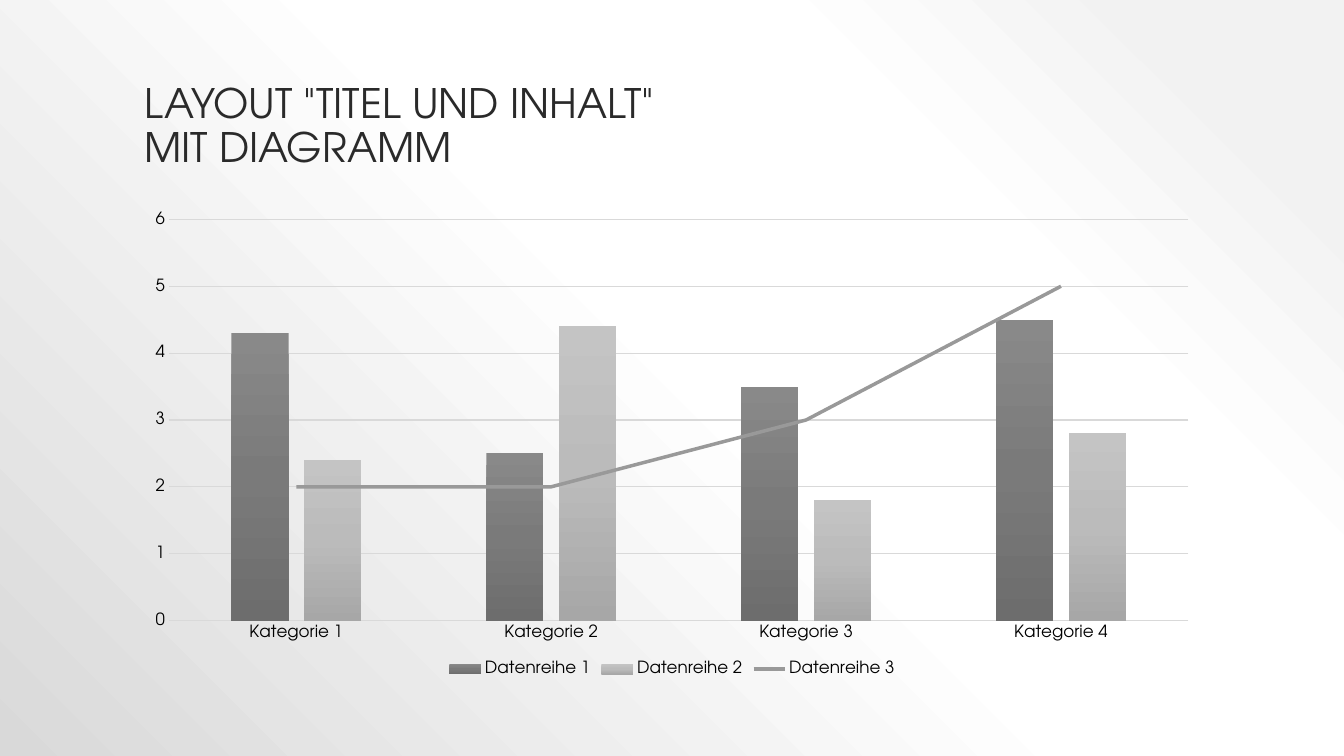
from lxml import etree
from pptx import Presentation
from pptx.chart.data import CategoryChartData
from pptx.dml.color import RGBColor
from pptx.enum.chart import XL_CHART_TYPE as ChartType
from pptx.enum.chart import XL_LEGEND_POSITION as LegendPosition
from pptx.enum.chart import XL_MARKER_STYLE as MarkerStyle
from pptx.enum.chart import XL_TICK_MARK as TickMark
from pptx.enum.text import MSO_ANCHOR, MSO_AUTO_SIZE, PP_ALIGN
from pptx.oxml import parse_xml
from pptx.oxml.ns import nsdecls, qn
from pptx.util import Pt

PX = 914400 / 100.8
SLIDE_SIZE = (1344, 756)
TITLE_BOX = (134, 30, 1076, 146)
CHART_BOX = (134, 202, 1076, 479)
FONT = "TeX Gyre Adventor"
COLORS = {"title": "2A2A2A", "text": "000000", "grid": "D9D9D9", "line": "999999"}
BACKGROUND_STOPS = [(10, "F2F2F2"), (28, "FFFFFF"), (48, "FFFFFF"), (100, "D9D9D9")]
FROM_TOP_RIGHT = '<a:path {} path="circle"><a:fillToRect l="100000" b="100000"/></a:path>'
DOWNWARD = '<a:lin {} ang="5400000" scaled="0"/>'
CATEGORIES = [f"Kategorie {number}" for number in range(1, 5)]
SERIES = {
    "Datenreihe 1": (4.3, 2.5, 3.5, 4.5),
    "Datenreihe 2": (2.4, 4.4, 1.8, 2.8),
    "Datenreihe 3": (2, 2, 3, 5),
}
COLUMN_STOPS = [
    [(0, "898989"), (50, "7A7A7A"), (100, "6D6D6D")],
    [(0, "C4C4C4"), (50, "BBBBBB"), (100, "A7A7A7")],
]


def px(length):
    return round(length * PX)


def color(name):
    return RGBColor.from_string(COLORS[name])


def format_font(font, size, color_name):
    font.name = FONT
    font.size = Pt(size)
    font.bold = False
    font.color.rgb = color(color_name)


def format_line(line, width, color_name):
    line.width = Pt(width)
    line.color.rgb = color(color_name)


def set_gradient(fill, owner, stops, direction):
    """Fill with (percent, hex) stops; owner is the XML element that holds the fill."""
    fill.gradient()
    gradient = next(owner.iter(qn("a:gradFill")))
    for child in list(gradient):
        gradient.remove(child)
    stop_list = etree.SubElement(gradient, qn("a:gsLst"))
    for percent, hex_color in stops:
        stop = etree.SubElement(stop_list, qn("a:gs"), pos=str(percent * 1000))
        etree.SubElement(stop, qn("a:srgbClr"), val=hex_color)
    gradient.append(parse_xml(direction.format(nsdecls("a"))))


def add_title(slide, box, text):
    title = slide.shapes.title
    title.left, title.top, title.width, title.height = map(px, box)
    frame = title.text_frame
    frame.text = text
    frame.word_wrap = True
    frame.auto_size = MSO_AUTO_SIZE.NONE
    frame.vertical_anchor = MSO_ANCHOR.BOTTOM
    paragraph = frame.paragraphs[0]
    paragraph.alignment = PP_ALIGN.LEFT
    paragraph.line_spacing = 0.9
    for run in paragraph.runs:
        format_font(run.font, 29, "title")


def move_last_series_to_line(chart):
    """Turn the last column series into a line plot on the same axes."""
    columns = chart.plots[0]._element
    series = columns.findall(qn("c:ser"))[-1]
    for column_setting in series.findall(qn("c:invertIfNegative")):
        series.remove(column_setting)
    line_plot = parse_xml(
        f'<c:lineChart {nsdecls("c")}><c:grouping val="standard"/>'
        '<c:varyColors val="0"/><c:marker val="1"/></c:lineChart>'
    )
    line_plot.insert(2, series)
    for axis in columns.findall(qn("c:axId")):
        etree.SubElement(line_plot, qn("c:axId"), val=axis.get("val"))
    columns.addnext(line_plot)


def format_axes(chart):
    for axis in (chart.category_axis, chart.value_axis):
        axis.major_tick_mark = axis.minor_tick_mark = TickMark.NONE
        format_font(axis.tick_labels.font, 12, "text")
    format_line(chart.category_axis.format.line, 0.75, "grid")
    values = chart.value_axis
    values.minimum_scale, values.maximum_scale, values.major_unit = 0, 6, 1
    values.format.line.fill.background()
    values.has_major_gridlines = True
    format_line(values.major_gridlines.format.line, 0.75, "grid")


def add_combined_chart(slide, box):
    data = CategoryChartData()
    data.categories = CATEGORIES
    for name, values in SERIES.items():
        data.add_series(name, values)
    chart = slide.shapes.add_chart(ChartType.COLUMN_CLUSTERED, *map(px, box), data).chart
    chart.has_title = False
    format_font(chart.font, 12, "text")
    move_last_series_to_line(chart)
    column_plot, line_plot = chart.plots
    column_plot.vary_by_categories = False
    column_plot.gap_width = 219
    column_plot.overlap = -27
    for series, stops in zip(column_plot.series, COLUMN_STOPS):
        set_gradient(series.format.fill, series._element, stops, DOWNWARD)
    line_series = line_plot.series[0]
    line_series.smooth = False
    line_series.marker.style = MarkerStyle.NONE
    format_line(line_series.format.line, 2.5, "line")
    format_axes(chart)
    chart.has_legend = True
    chart.legend.position = LegendPosition.BOTTOM
    chart.legend.include_in_layout = False
    format_font(chart.legend.font, 12, "text")


def main():
    presentation = Presentation()
    presentation.slide_width, presentation.slide_height = map(px, SLIDE_SIZE)
    slide = presentation.slides.add_slide(presentation.slide_layouts.get_by_name("Title Only"))
    set_gradient(slide.background.fill, slide._element, BACKGROUND_STOPS, FROM_TOP_RIGHT)
    add_title(slide, TITLE_BOX, 'LAYOUT "TITEL UND INHALT"\vMIT DIAGRAMM')
    add_combined_chart(slide, CHART_BOX)
    presentation.save("out.pptx")


if __name__ == "__main__":
    main()
